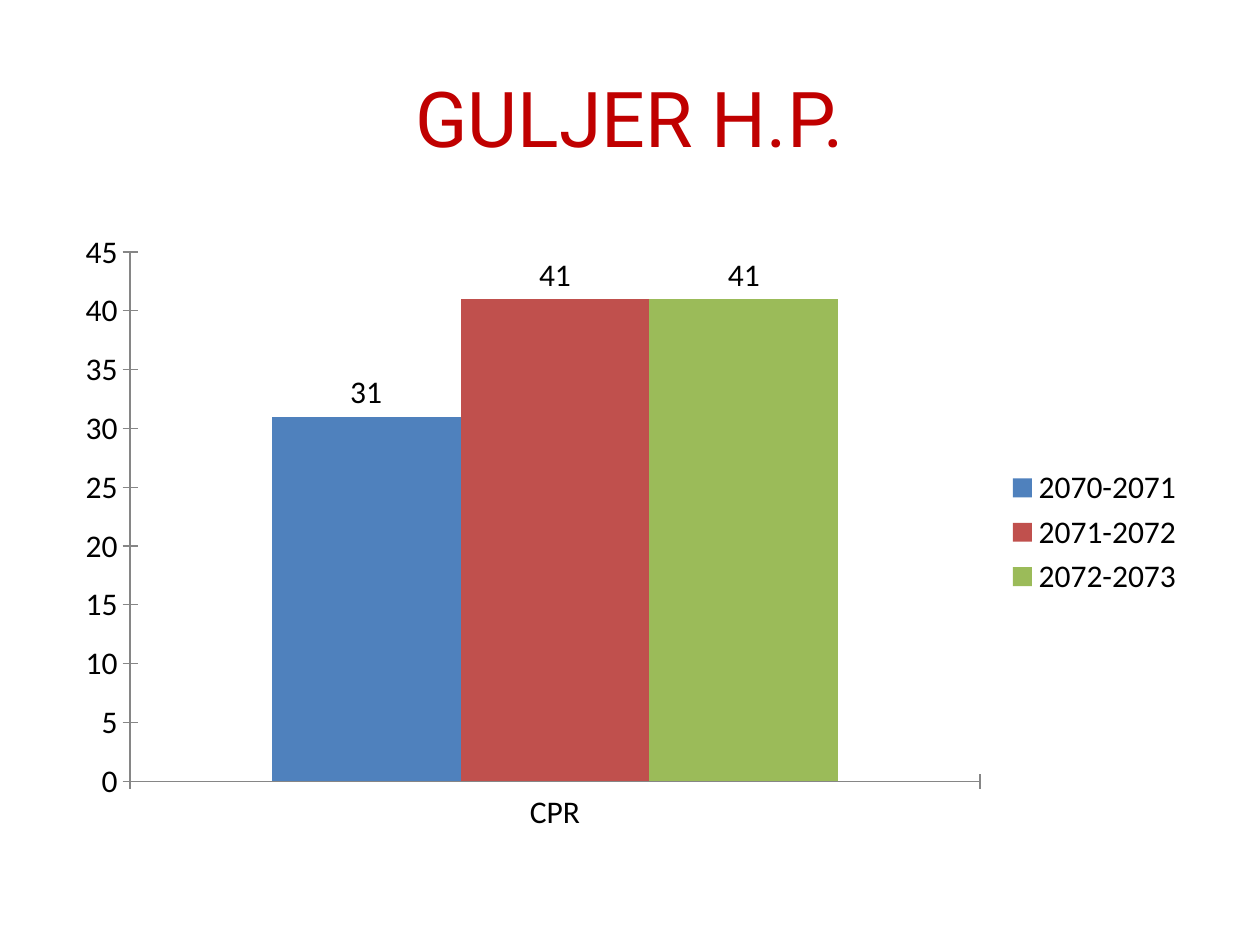
from pptx import Presentation
from pptx.chart.data import CategoryChartData
from pptx.dml.color import RGBColor
from pptx.enum.chart import (XL_CHART_TYPE, XL_LABEL_POSITION,
                             XL_LEGEND_POSITION, XL_TICK_MARK)
from pptx.enum.text import MSO_ANCHOR, PP_ALIGN
from pptx.util import Pt

PX = 9144  # EMU per px, 100 px to the inch
COLUMN = XL_CHART_TYPE.COLUMN_CLUSTERED
OUTER = XL_LABEL_POSITION.OUTSIDE_END
RIGHT = XL_LEGEND_POSITION.RIGHT
CROSS = XL_TICK_MARK.CROSS
MIDDLE = MSO_ANCHOR.MIDDLE
CENTER = PP_ALIGN.CENTER

COLORS = {"title": "C00000", "text": "000000", "axis": "868686",
          "blue": "4F81BD", "red": "C0504D", "green": "9BBB59"}
SERIES = [("2070-2071", 31, "blue"),
          ("2071-2072", 41, "red"),
          ("2072-2073", 41, "green")]


def color(name):
    return RGBColor.from_string(COLORS[name])


def style(font, size, face, tint):
    font.size = Pt(size)
    font.name = face
    font.color.rgb = color(tint)


def write(frame, text, size=18, face="Calibri", tint="text", align=CENTER):
    frame.word_wrap = True
    frame.vertical_anchor = MIDDLE
    para = frame.paragraphs[0]
    para.alignment = align
    run = para.add_run()
    run.text = text
    style(run.font, size, face, tint)


class Deck:
    def __init__(self, width, height):
        self.face = "Calibri"
        self.size = 18
        self.file = Presentation()
        self.file.slide_width = width * PX
        self.file.slide_height = height * PX
        self.slide = self.file.slides.add_slide(self.file.slide_layouts[5])

    def title(self, text, box, **form):
        shape = self.slide.shapes.title
        shape.left, shape.top, shape.width, shape.height = (n * PX for n in box)
        write(shape.text_frame, text, **form)

    def columns(self, group, series, box):
        data = CategoryChartData()
        data.categories = [group]
        for name, value, _ in series:
            data.add_series(name, [value])
        frame = self.slide.shapes.add_chart(COLUMN, *(n * PX for n in box), data)
        chart = frame.chart
        chart.has_title = False
        style(chart.font, self.size, self.face, "text")

        # Legend
        chart.has_legend = True
        chart.legend.position = RIGHT
        chart.legend.include_in_layout = False

        # Axes
        for axis in (chart.category_axis, chart.value_axis):
            axis.has_major_gridlines = False
            axis.major_tick_mark = CROSS
            axis.format.line.color.rgb = color("axis")

        # Columns and their values
        plot = chart.plots[0]
        plot.gap_width = 150
        plot.vary_by_categories = False
        for bar, (_, _, tint) in zip(plot.series, series):
            bar.format.fill.solid()
            bar.format.fill.fore_color.rgb = color(tint)
            bar.data_labels.show_value = True
            bar.data_labels.position = OUTER


def main():
    deck = Deck(1000, 750)
    deck.title("GULJER H.P.", (50, 30, 900, 125),
               size=44, face="Roboto", tint="title")
    deck.columns("CPR", SERIES, (50, 175, 900, 495))
    deck.file.save("out.pptx")


if __name__ == "__main__":
    main()
